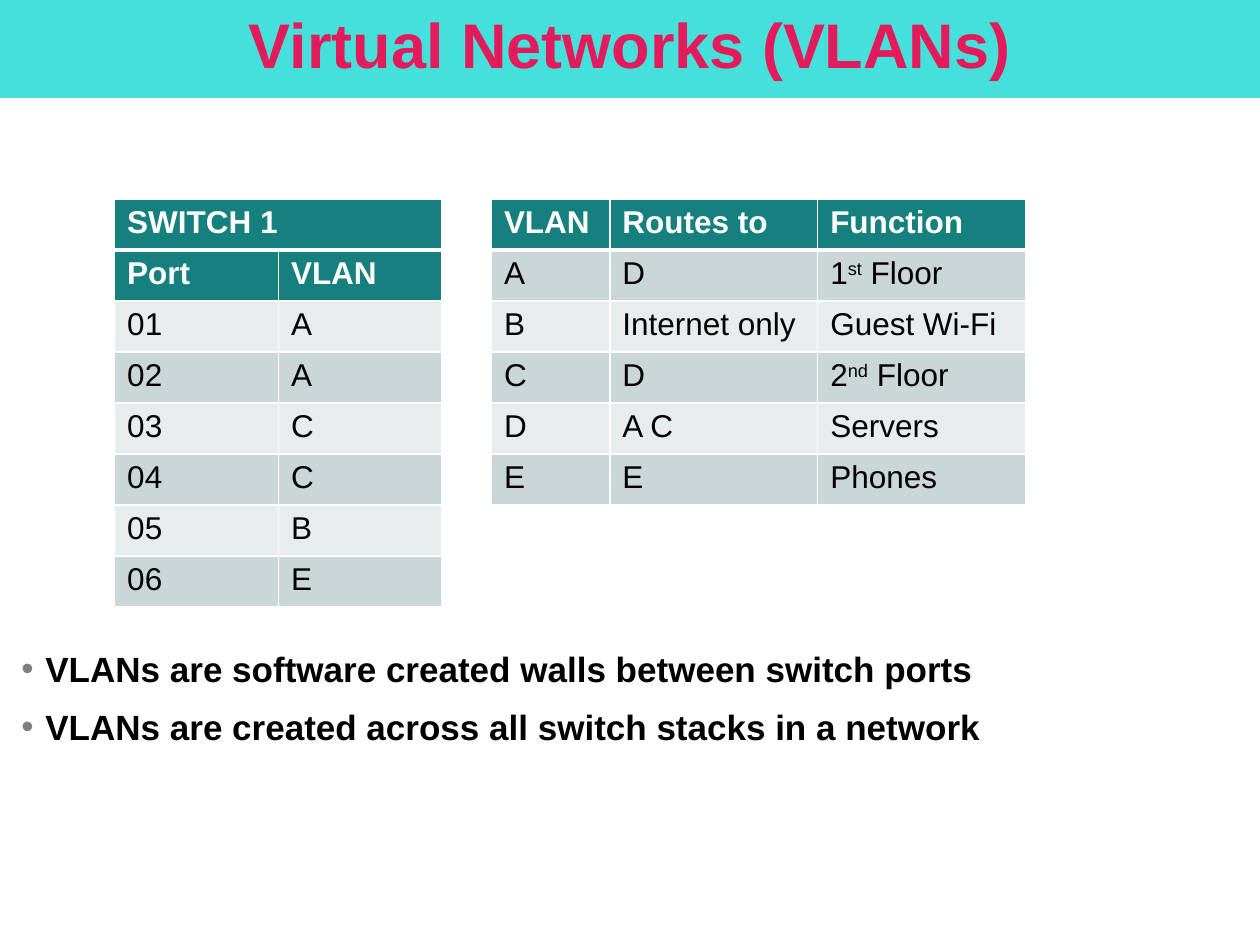
import pptx
import pptx.util
import pptx.dml.color
import pptx.enum.shapes
import pptx.enum.text
import pptx.oxml
import pptx.oxml.ns
import lxml.etree

Inches, Pt = pptx.util.Inches, pptx.util.Pt
qn = pptx.oxml.ns.qn
TEAL, DARK, LIGHT = "15807D", "CAD7D6", "E7ECEC"
WHITE, BLACK = "FFFFFF", "000000"
ROW = 0.405

PORTS = [("SWITCH 1", ""), ("Port", "VLAN"), ("01", "A"), ("02", "A"),
         ("03", "C"), ("04", "C"), ("05", "B"), ("06", "E")]
ROUTES = [("VLAN", "Routes to", "Function"), ("A", "D", "1^st^ Floor"),
          ("B", "Internet only", "Guest Wi-Fi"), ("C", "D", "2^nd^ Floor"),
          ("D", "A C", "Servers"), ("E", "E", "Phones")]
POINTS = ["VLANs are software created walls between switch ports",
          "VLANs are created across all switch stacks in a network"]


def color(hex):
    """Turn a hex string into a colour."""
    return pptx.dml.color.RGBColor.from_string(hex)


def write(para, text, size, hex, bold):
    """Add text run by run, raising the parts held between carets."""
    for i, part in enumerate(text.split("^")):
        if not part:
            continue
        run = para.add_run()
        run.text = part
        font = run.font
        font.name, font.size, font.bold = "Arial", Pt(size), bold
        font.color.rgb = color(hex)
        if i % 2:
            run._r.get_or_add_rPr().set("baseline", "30000")


def clear(frame):
    """Wrap the text and take away the margins."""
    frame.word_wrap = True
    frame.margin_left = frame.margin_right = 0
    frame.margin_top = frame.margin_bottom = 0


def edge(cell, top, base):
    """Draw white borders around a cell."""
    props = cell._tc.get_or_add_tcPr()
    sides = [("L", 1), ("R", 1), ("T", top), ("B", base)]
    for i, (side, width) in enumerate(sides):
        line = lxml.etree.Element(qn("a:ln" + side), w=str(Pt(width)))
        fill = lxml.etree.SubElement(line, qn("a:solidFill"))
        lxml.etree.SubElement(fill, qn("a:srgbClr"), val=WHITE)
        props.insert(i, line)


def banner(slide, left, top, width, height, text):
    """Place the title band."""
    kind = pptx.enum.shapes.MSO_SHAPE.RECTANGLE
    band = slide.shapes.add_shape(
        kind, Inches(left), Inches(top), Inches(width), Inches(height))
    band.shadow.inherit = False
    band.fill.solid()
    band.fill.fore_color.rgb = band.line.color.rgb = color("45E0DC")
    band.line.width = Pt(0.75)
    frame = band.text_frame
    clear(frame)
    frame.vertical_anchor = pptx.enum.text.MSO_ANCHOR.MIDDLE
    para = frame.paragraphs[0]
    para.alignment = pptx.enum.text.PP_ALIGN.CENTER
    para.line_spacing = 0.9
    write(para, text, 36, "E41B5B", True)


def grid(slide, left, top, widths, rows, heads):
    """Place a banded table whose first rows are headings."""
    table = slide.shapes.add_table(
        len(rows), len(widths), Inches(left), Inches(top),
        Inches(sum(widths)), Inches(ROW * len(rows))).table
    for col, width in zip(table.columns, widths):
        col.width = Inches(width)
    for r, row in enumerate(rows):
        table.rows[r].height = Inches(ROW)
        head = r < heads
        for c, text in enumerate(row):
            cell = table.cell(r, c)
            cell.fill.solid()
            cell.fill.fore_color.rgb = color(
                TEAL if head else DARK if r % 2 else LIGHT)
            edge(cell, 3 if r == 1 else 1, 3 if r == 0 else 1)
            write(cell.text_frame.paragraphs[0], text, 18,
                  WHITE if head else BLACK, head)
    return table


def bullets(slide, left, top, width, height, points):
    """Place the bulleted points."""
    frame = slide.shapes.add_textbox(
        Inches(left), Inches(top), Inches(width), Inches(height)).text_frame
    clear(frame)
    for i, text in enumerate(points):
        para = frame.add_paragraph() if i else frame.paragraphs[0]
        para.line_spacing = 1.3
        para.space_before = Pt(2)
        props = para._p.get_or_add_pPr()
        props.set("marL", str(Inches(0.19)))
        props.set("indent", str(Inches(-0.19)))
        tint = lxml.etree.SubElement(props, qn("a:buClr"))
        lxml.etree.SubElement(tint, qn("a:srgbClr"), val="7F7F7F")
        lxml.etree.SubElement(props, qn("a:buFont"), typeface="Arial")
        lxml.etree.SubElement(props, qn("a:buChar"), char="•")
        write(para, text, 20, BLACK, True)


def main():
    """Build and save the slide."""
    deck = pptx.Presentation()
    deck.slide_width, deck.slide_height = Inches(10), Inches(7.5)
    slide = deck.slides.add_slide(deck.slide_layouts[6])
    banner(slide, 0, 0, 10, 0.77, "Virtual Networks (VLANs)")
    ports = grid(slide, 0.91, 1.58, [1.3, 1.3], PORTS, 2)
    ports.cell(0, 0).merge(ports.cell(0, 1))
    grid(slide, 3.9, 1.58, [0.94, 1.65, 1.65], ROUTES, 1)
    bullets(slide, 0.17, 5.04, 9.83, 1.39, POINTS)
    deck.save("out.pptx")


if __name__ == "__main__":
    main()
